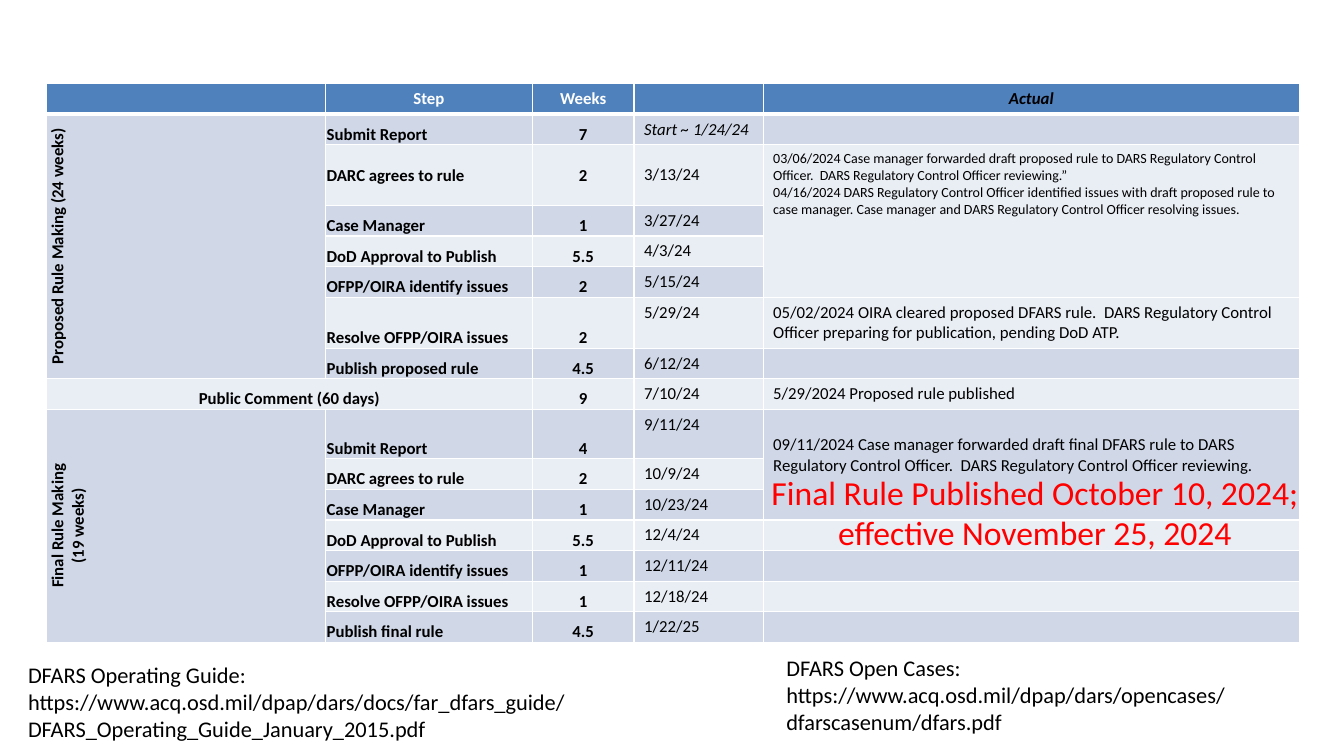
from lxml import etree
from pptx import Presentation
from pptx import util as u
from pptx.dml.color import RGBColor
from pptx.enum import text
from pptx.oxml.ns import qn

WIDTH, HEIGHT = 13.33, 7.5
FONT = "Calibri"
COLOURS = {"head": "4F81BD", "dark": "D0D8E8", "light": "E9EDF4",
           "white": "FFFFFF", "black": "000000", "alert": "FF0000"}
COLUMNS = [2.77, 2.05, 1.01, 1.28, 5.32]
ROW, TALL_ROWS = 0.3, {2: 0.6, 6: 0.49, 9: 0.49}
STEP, WEEKS, DATE, ACTUAL = 1, 2, 3, 4
LEFT, CENTER = text.PP_ALIGN.LEFT, text.PP_ALIGN.CENTER
TOP, MIDDLE, BOTTOM = (text.MSO_ANCHOR.TOP, text.MSO_ANCHOR.MIDDLE,
                       text.MSO_ANCHOR.BOTTOM)
WIDE, TIGHT = (0.1, 0.05, 0.1, 0.05), (0.01, 0.01, 0.01, 0)
HEADINGS = {STEP: "Step", WEEKS: "Weeks", ACTUAL: "Actual"}
SCHEDULE = [
    ("Submit Report", "7", "Start ~ 1/24/24"),
    ("DARC agrees to rule", "2", "3/13/24"),
    ("Case Manager", "1", "3/27/24"),
    ("DoD Approval to Publish", "5.5", "4/3/24"),
    ("OFPP/OIRA identify issues", "2", "5/15/24"),
    ("Resolve OFPP/OIRA issues", "2", "5/29/24"),
    ("Publish proposed rule", "4.5", "6/12/24"),
    ("", "9", "7/10/24"),
    ("Submit Report", "4", "9/11/24"),
    ("DARC agrees to rule", "2", "10/9/24"),
    ("Case Manager", "1", "10/23/24"),
    ("DoD Approval to Publish", "5.5", "12/4/24"),
    ("OFPP/OIRA identify issues", "1", "12/11/24"),
    ("Resolve OFPP/OIRA issues", "1", "12/18/24"),
    ("Publish final rule", "4.5", "1/22/25"),
]
PHASES = {1: ["Proposed Rule Making (24 weeks)"],
          9: ["Final Rule Making", "(19 weeks)"]}
PHASE_ROWS, COMMENT_ROW = 7, 8
ACTUALS = [
    (2, 4, 10, WIDE, [
        "03/06/2024 Case manager forwarded draft proposed rule to DARS Regulatory "
        "Control Officer.  DARS Regulatory Control Officer reviewing.”",
        "04/16/2024 DARS Regulatory Control Officer identified issues with draft "
        "proposed rule to case manager. Case manager and DARS Regulatory Control "
        "Officer resolving issues."]),
    (6, 1, 12, WIDE, [
        "05/02/2024 OIRA cleared proposed DFARS rule.  DARS Regulatory Control "
        "Officer preparing for publication, pending DoD ATP."]),
    (8, 1, 12, WIDE, ["5/29/2024 Proposed rule published"]),
    (9, 3, 12, (0.1, 0.25, 0.1, 0.05), [
        "09/11/2024 Case manager forwarded draft final DFARS rule to DARS "
        "Regulatory Control Officer.  DARS Regulatory Control Officer reviewing."]),
]
NOTES = [
    ((0.18, 6.51, 5.9, 0.91), 16, "black", LEFT, True, [
        "DFARS Operating Guide:",
        "https://www.acq.osd.mil/dpap/dars/docs/far_dfars_guide/"
        "DFARS_Operating_Guide_January_2015.pdf"]),
    ((7.7, 6.44, 5.52, 0.91), 16, "black", LEFT, True, [
        "DFARS Open Cases:",
        "https://www.acq.osd.mil/dpap/dars/opencases/dfarscasenum/dfars.pdf"]),
    ((7.49, 4.63, 5.55, 0.91), 24, "alert", CENTER, False, [
        "Final Rule Published October 10, 2024;", "effective November 25, 2024"]),
]


def write(frame, lines, size, colour="black", align=LEFT, bold=False, italic=False):
    """Fill a text frame with one paragraph per line."""
    for index, line in enumerate(lines):
        para = frame.add_paragraph() if index else frame.paragraphs[0]
        para.alignment = align
        span = para.add_run()
        span.text = line
        font = span.font
        font.name, font.size, font.bold, font.italic = FONT, u.Pt(size), bold, italic
        font.color.rgb = RGBColor.from_string(COLOURS[colour])


def style_cell(cell, fill, bottom):
    """Give a cell white borders, a fill and a small empty-line size."""
    props = cell._tc.get_or_add_tcPr()
    for side, points in (("L", 1), ("R", 1), ("T", 1), ("B", bottom)):
        line = etree.SubElement(props, qn("a:ln" + side), w=str(u.Pt(points)))
        solid = etree.SubElement(line, qn("a:solidFill"))
        etree.SubElement(solid, qn("a:srgbClr"), val=COLOURS["white"])
    cell.fill.solid()
    cell.fill.fore_color.rgb = RGBColor.from_string(COLOURS[fill])
    etree.SubElement(cell.text_frame.paragraphs[0]._p, qn("a:endParaRPr"), sz="1200")


def fill_cell(cell, lines, size=12, anchor=TOP, insets=WIDE, **look):
    """Place text in a cell with its anchor and insets."""
    cell.vertical_anchor = anchor
    (cell.margin_left, cell.margin_top,
     cell.margin_right, cell.margin_bottom) = map(u.Inches, insets)
    write(cell.text_frame, lines, size, **look)


def add_schedule(page):
    """Draw the banded rule-making table."""
    heights = [TALL_ROWS.get(row, ROW) for row in range(len(SCHEDULE) + 1)]
    frame = page.shapes.add_table(
        len(heights), len(COLUMNS), u.Inches(0.46), u.Inches(0.83),
        u.Inches(sum(COLUMNS)), u.Inches(sum(heights)))
    table = frame.table
    for column, width in zip(table.columns, COLUMNS):
        column.width = u.Inches(width)
    for index, height in enumerate(heights):
        table.rows[index].height = u.Inches(height)
        fill = "head" if index == 0 else "dark" if index % 2 else "light"
        for cell in table.rows[index].cells:
            style_cell(cell, fill, 1 if index else 3)
    for column, heading in HEADINGS.items():
        actual = column == ACTUAL
        fill_cell(table.cell(0, column), [heading], align=CENTER, bold=True,
                  italic=actual, colour="black" if actual else "white")
    for row, (step, weeks, date) in enumerate(SCHEDULE, 1):
        anchor = MIDDLE if row == 2 else BOTTOM
        if step:
            fill_cell(table.cell(row, STEP), [step], anchor=anchor,
                      insets=TIGHT, bold=True)
        fill_cell(table.cell(row, WEEKS), [weeks], anchor=anchor,
                  insets=TIGHT, align=CENTER, bold=True)
        fill_cell(table.cell(row, DATE), [date], italic=row == 1,
                  anchor=MIDDLE if row == 2 else TOP)
    for row, lines in PHASES.items():
        phase = table.cell(row, 0)
        phase.merge(table.cell(row + PHASE_ROWS - 1, 0))
        fill_cell(phase, lines, anchor=MIDDLE, insets=TIGHT, align=CENTER, bold=True)
        phase._tc.get_or_add_tcPr().set("vert", "vert270")
    comment = table.cell(COMMENT_ROW, 0)
    comment.merge(table.cell(COMMENT_ROW, STEP))
    fill_cell(comment, ["Public Comment (60 days)"], anchor=BOTTOM, insets=TIGHT,
              align=CENTER, bold=True)
    for row, count, size, insets, lines in ACTUALS:
        actual = table.cell(row, ACTUAL)
        if count > 1:
            actual.merge(table.cell(row + count - 1, ACTUAL))
        fill_cell(actual, lines, size, insets=insets)


def add_note(page, place, size, colour, align, wrap, lines):
    """Add a free text box that grows with its text."""
    box = page.shapes.add_textbox(*map(u.Inches, place))
    box.text_frame.word_wrap = wrap
    box.text_frame.auto_size = text.MSO_AUTO_SIZE.SHAPE_TO_FIT_TEXT
    write(box.text_frame, lines, size, colour, align)


def main():
    """Build and save the deck."""
    deck = Presentation()
    deck.slide_width, deck.slide_height = u.Inches(WIDTH), u.Inches(HEIGHT)
    page = deck.slides.add_slide(deck.slide_layouts[6])
    add_schedule(page)
    for note in NOTES:
        add_note(page, *note)
    deck.save("out.pptx")


if __name__ == "__main__":
    main()
